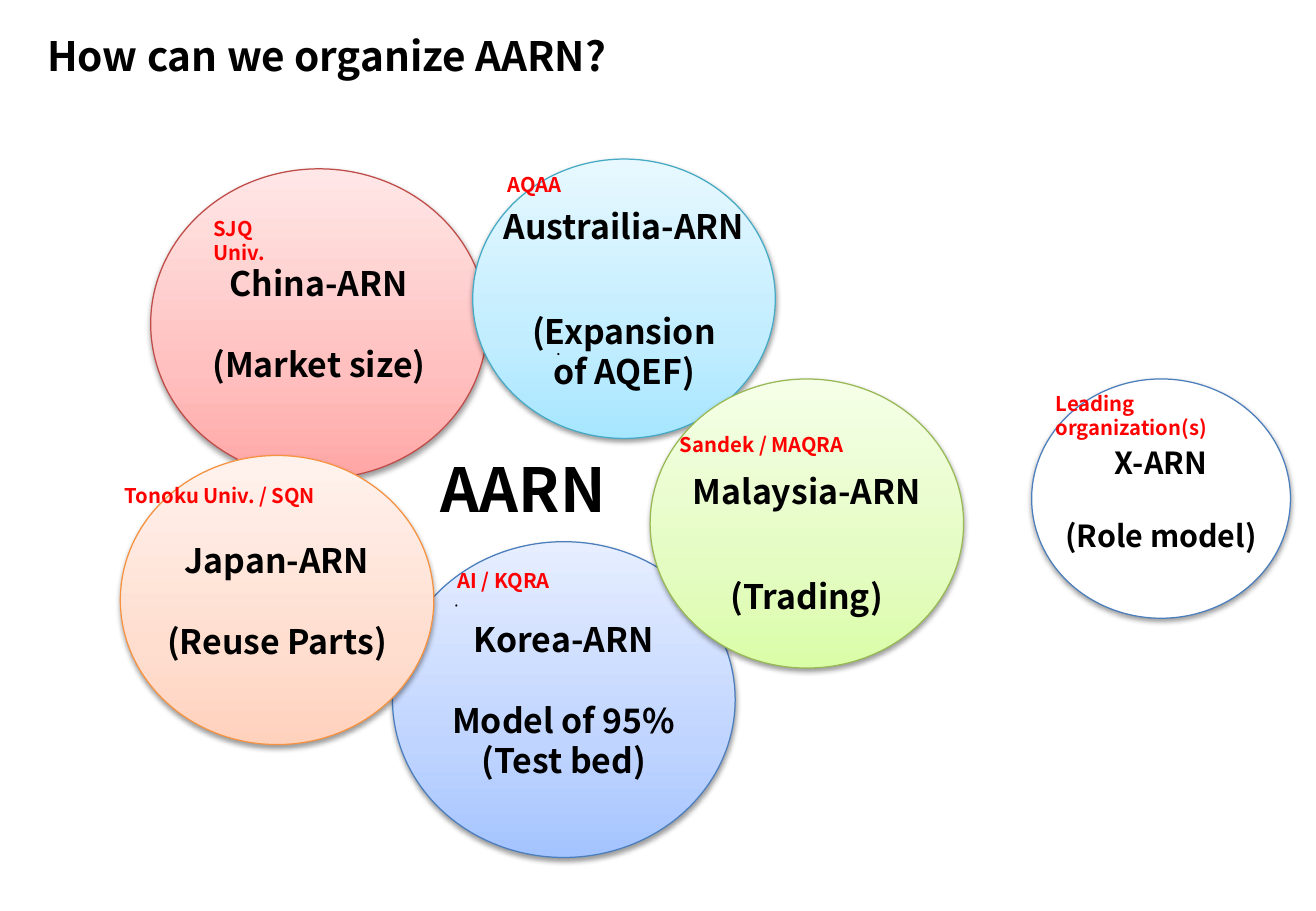
import dataclasses

import pptx
import pptx.dml.color
import pptx.enum.shapes
import pptx.enum.text
import pptx.oxml
import pptx.oxml.ns
import pptx.util

Inches = pptx.util.Inches
Pt = pptx.util.Pt
ALIGN = pptx.enum.text.PP_ALIGN
OVAL = pptx.enum.shapes.MSO_SHAPE.OVAL


@dataclasses.dataclass(frozen=True)
class Theme:
    font: str = "Noto Sans CJK KR"
    text: str = "000000"
    label: str = "FF0000"
    dot: str = "B9CDE5"
    blue: tuple = ("4B7EBC", "A4C4FF", "BFD4FF", "E6EEFF")
    red: tuple = ("BF4C48", "FFA6A5", "FFC0BF", "FFE7E7")
    orange: tuple = ("F69240", "FFD2BD", "FFDED0", "FFF2ED")
    aqua: tuple = ("46AAC5", "A7E6FF", "C1EDFF", "E7F8FF")
    green: tuple = ("98B955", "DAFDA7", "E4FCC2", "F5FFE7")
    white: tuple = ("4B7EBC", "FFFFFF")
    title_size: int = 24
    centre_size: int = 36
    member_size: int = 20
    model_size: int = 18
    label_size: int = 12


THEME = Theme()


def rgb(value):
    return pptx.dml.color.RGBColor.from_string(value)


def style(p, size, color, align):
    p.alignment = align
    p.font.name = THEME.font
    p.font.size = Pt(size)
    p.font.bold = True
    p.font.color.rgb = rgb(color)


def add_oval(slide, box, fill, line, width):
    sp = slide.shapes.add_shape(OVAL, *map(Inches, box))
    sp.shadow.inherit = False
    sp.fill.solid()
    sp.fill.fore_color.rgb = rgb(fill)
    sp.line.color.rgb = rgb(line)
    sp.line.width = Pt(width)
    return sp


def set_gradient(sp, colors):
    stops = "".join(
        f'<a:gs pos="{pos}"><a:srgbClr val="{color}"/></a:gs>'
        for pos, color in zip((0, 35000, 100000), colors))
    grad = pptx.oxml.parse_xml(
        f'<a:gradFill {pptx.oxml.ns.nsdecls("a")} rotWithShape="1">'
        f'<a:gsLst>{stops}</a:gsLst><a:lin ang="16200000" scaled="0"/></a:gradFill>')
    solid = sp._element.spPr.find(pptx.oxml.ns.qn("a:solidFill"))
    solid.getparent().replace(solid, grad)


def set_shadow(sp):
    effects = sp._element.spPr.find(pptx.oxml.ns.qn("a:effectLst"))
    effects.append(pptx.oxml.parse_xml(
        f'<a:outerShdw {pptx.oxml.ns.nsdecls("a")} blurRad="40000" dist="20000" '
        'dir="5400000" rotWithShape="0"><a:srgbClr val="000000">'
        '<a:alpha val="38000"/></a:srgbClr></a:outerShdw>'))


def add_member(slide, box, palette, lines, gap=24, top=0.05, size=THEME.member_size):
    line, *colors = palette
    sp = add_oval(slide, box, colors[0], line, 0.75)
    if len(colors) > 1:
        set_gradient(sp, colors)
    set_shadow(sp)
    tf = sp.text_frame
    tf.word_wrap = False
    tf.vertical_anchor = pptx.enum.text.MSO_ANCHOR.MIDDLE
    tf.margin_left = tf.margin_right = Inches(0.04)
    tf.margin_top, tf.margin_bottom = Inches(top), Inches(0.05)
    for i, text in enumerate(lines):
        p = tf.add_paragraph() if i else tf.paragraphs[0]
        p.text = text
        style(p, size, THEME.text, ALIGN.CENTER)
        if i == 1:
            p.space_before = Pt(gap)


def add_text(slide, box, text, size=THEME.label_size, color=THEME.label, align=ALIGN.LEFT):
    tf = slide.shapes.add_textbox(*map(Inches, box)).text_frame
    tf.word_wrap = True
    p = tf.paragraphs[0]
    p.text = text
    style(p, size, color, align)


def main():
    prs = pptx.Presentation()
    prs.slide_width, prs.slide_height = Inches(10.83), Inches(7.5)
    slide = prs.slides.add_slide(prs.slide_layouts[6])

    add_member(slide, (3.23, 4.46, 2.82, 2.6), THEME.blue,
               ("Korea-ARN", "Model of 95%", "(Test bed)"))
    add_member(slide, (1.24, 1.39, 2.77, 2.55), THEME.red, ("China-ARN", "(Market size)"))
    add_member(slide, (0.99, 3.75, 2.58, 2.38), THEME.orange, ("Japan-ARN", "(Reuse Parts)"))
    add_member(slide, (3.89, 1.31, 2.49, 2.3), THEME.aqua,
               ("Austrailia-ARN", "(Expansion", "of AQEF)"), gap=38)
    add_member(slide, (5.35, 3.12, 2.58, 2.38), THEME.green,
               ("Malaysia-ARN", "(Trading)"), gap=38, top=0.38)
    add_member(slide, (8.49, 3.12, 2.13, 1.97), THEME.white,
               ("X-ARN", "(Role model)"), gap=21.5, size=THEME.model_size)

    for left, top in ((3.75, 4.98), (4.59, 2.91)):
        add_oval(slide, (left, top, 0.01, 0.01), THEME.dot, THEME.text, 0.5)

    add_text(slide, (0.29, 0.21, 4.91, 0.5), "How can we organize AARN?",
             THEME.title_size, THEME.text)
    add_text(slide, (3.53, 3.67, 1.65, 0.71), "AARN", THEME.centre_size, THEME.text)

    for box, text, align in (
        ((3.53, 4.63, 1.23, 0.3), "AI / KQRA", ALIGN.CENTER),
        ((1.66, 1.73, 0.92, 0.5), "SJQ\nUniv.", ALIGN.LEFT),
        ((0.93, 3.93, 1.77, 0.3), "Tonoku Univ. / SQN", ALIGN.LEFT),
        ((4.08, 1.37, 0.94, 0.3), "AQAA", ALIGN.LEFT),
        ((5.39, 3.51, 1.76, 0.3), "Sandek / MAQRA", ALIGN.CENTER),
        ((8.59, 3.17, 1.74, 0.5), "Leading organization(s)", ALIGN.LEFT),
    ):
        add_text(slide, box, text, align=align)

    prs.save("out.pptx")


if __name__ == "__main__":
    main()
